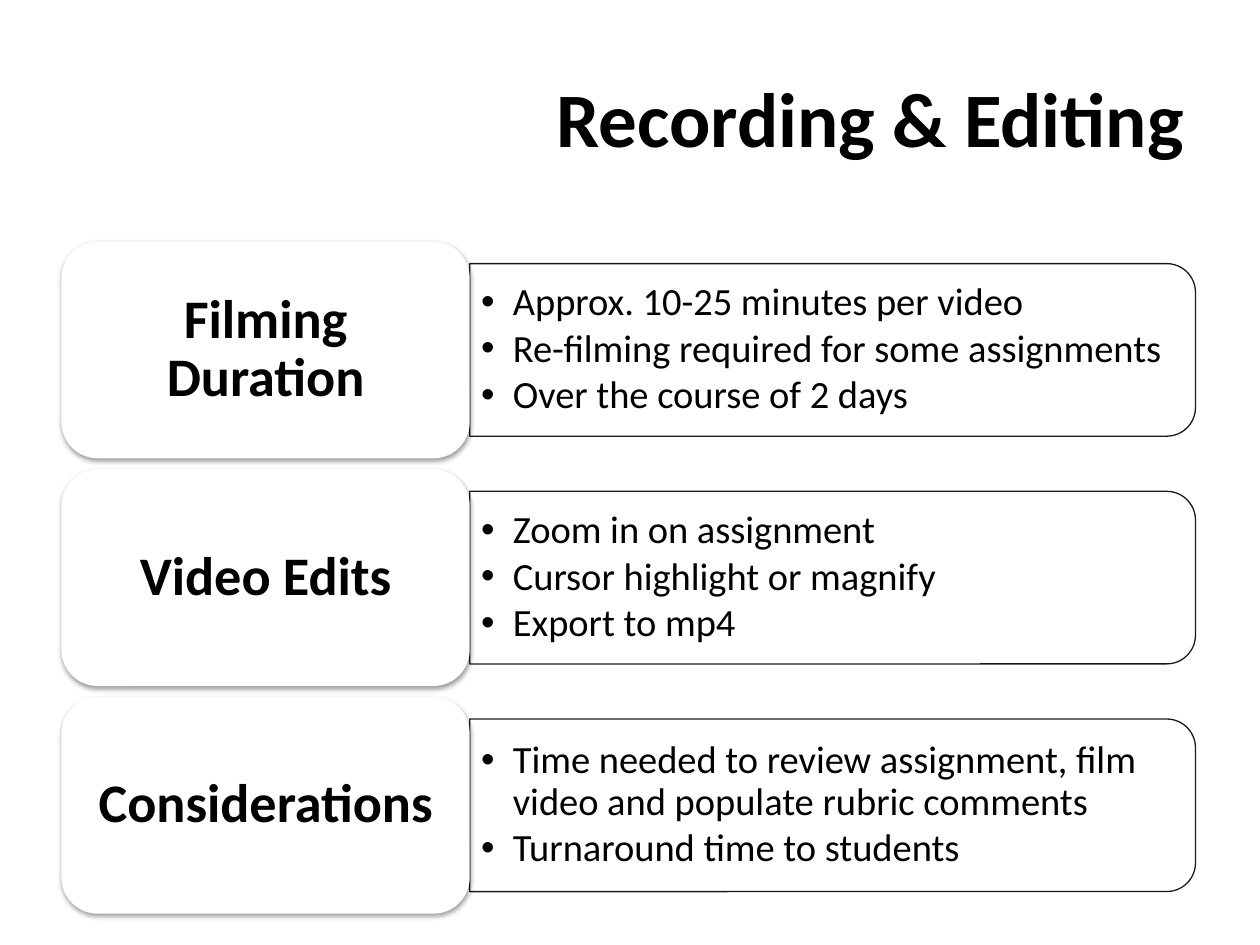
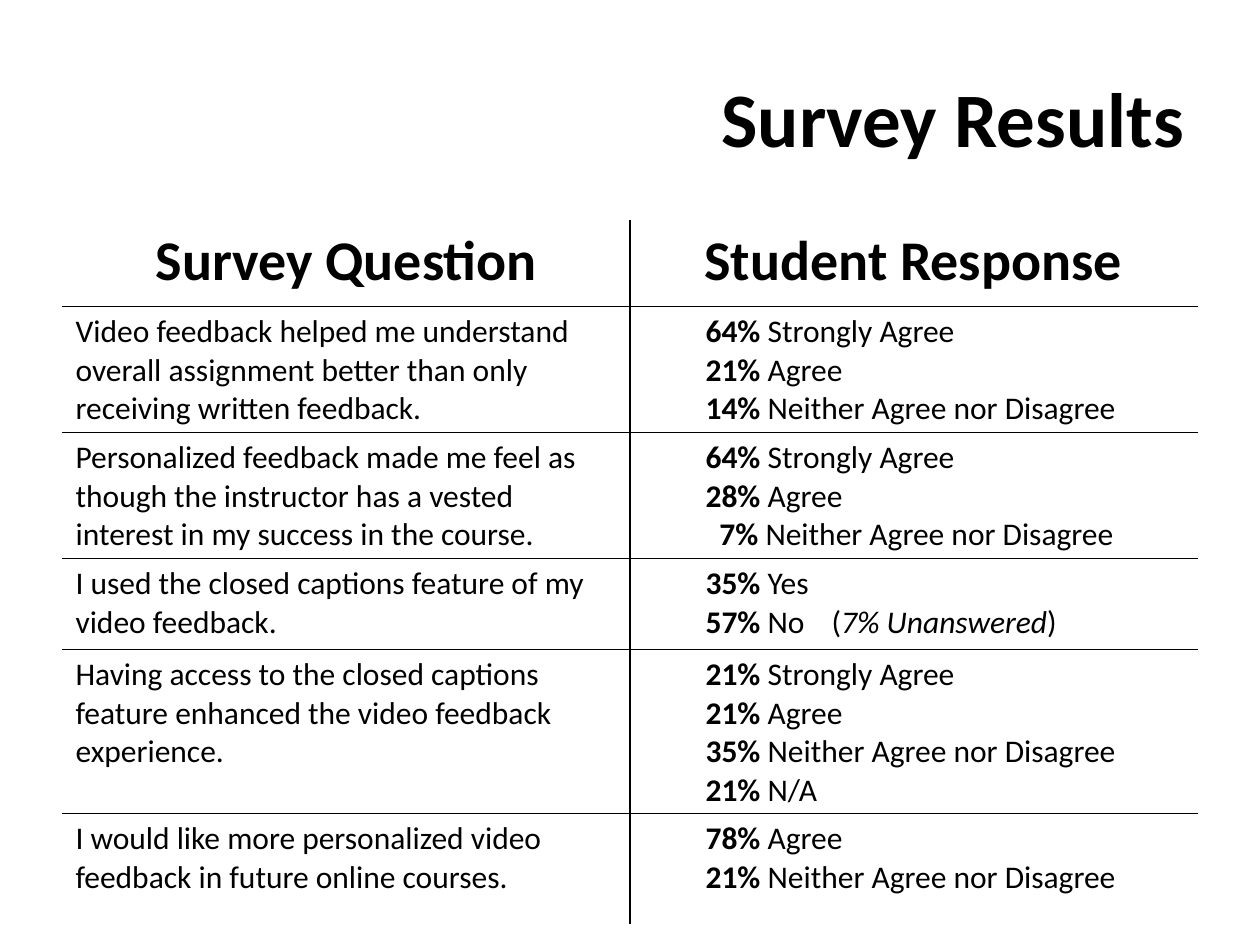
from lxml import etree
from pptx import Presentation
from pptx import util as u
from pptx.dml.color import RGBColor
from pptx.enum import shapes, text
from pptx.oxml import ns

HEX = {"ink": "000000", "paper": "FFFFFF"}
FACE = "Calibri"

# Slide 1: label and bullets of each band
HEAD = "Recording & Editing"
BANDS = [
    ("Filming Duration", ["Approx. 10-25 minutes per video",
                          "Re-filming required for some assignments",
                          "Over the course of 2 days"]),
    ("Video Edits", ["Zoom in on assignment",
                     "Cursor highlight or magnify",
                     "Export to mp4"]),
    ("Considerations", ["Time needed to review assignment, film video and "
                        "populate rubric comments",
                        "Turnaround time to students"]),
]

# Slide 2: question, then (share, answer, aside) lines
TITLE = "Survey Results"
COLS = ["Survey Question", "Student Response"]
SURVEY = [
    ("Video feedback helped me understand overall assignment better than only "
     "receiving written feedback.",
     [("64%", "Strongly Agree", ""), ("21%", "Agree", ""),
      ("14%", "Neither Agree nor Disagree", "")]),
    ("Personalized feedback made me feel as though the instructor has a vested "
     "interest in my success in the course.",
     [("64%", "Strongly Agree", ""), ("28%", "Agree", ""),
      ("7%", "Neither Agree nor Disagree", "")]),
    ("I used the closed captions feature of my video feedback.",
     [("35%", "Yes", ""), ("57%", "No", "7% Unanswered")]),
    ("Having access to the closed captions feature enhanced the video feedback "
     "experience.",
     [("21%", "Strongly Agree", ""), ("21%", "Agree", ""),
      ("35%", "Neither Agree nor Disagree", ""), ("21%", "N/A", "")]),
    ("I would like more personalized video feedback in future online courses.",
     [("78%", "Agree", ""), ("21%", "Neither Agree nor Disagree", "")]),
]
ROWS = [1.73, 2.41, 2.41, 1.83, 2.9, 2.24]


# Shared helpers
def color(key):
    return RGBColor.from_string(HEX[key])


def node(par, tag, **attrs):
    return etree.SubElement(par, ns.qn(tag), attrs)


def add_run(par, words, size, bold=False, slant=False):
    run = par.add_run()
    run.text = words
    font = run.font
    font.name, font.size = FACE, u.Pt(size)
    font.bold, font.italic = bold, slant
    font.color.rgb = color("ink")


def set_frame(frame, side, edge):
    frame.word_wrap = True
    frame.vertical_anchor = text.MSO_ANCHOR.MIDDLE
    frame.margin_left = frame.margin_right = u.Cm(side)
    frame.margin_top = frame.margin_bottom = u.Cm(edge)


def add_box(slide, x, y, w, h, side=0.25, edge=0.13):
    box = slide.shapes.add_textbox(u.Cm(x), u.Cm(y), u.Cm(w), u.Cm(h))
    set_frame(box.text_frame, side, edge)
    return box.text_frame


def add_form(slide, kind, x, y, w, h):
    form = slide.shapes.add_shape(kind, u.Cm(x), u.Cm(y), u.Cm(w), u.Cm(h))
    form.shadow.inherit = False
    form.fill.solid()
    form.fill.fore_color.rgb = color("paper")
    return form


def new_slide(deck, title):
    slide = deck.slides.add_slide(deck.slide_layouts[6])
    par = add_box(slide, 1.27, 0.76, 22.86, 3.18).paragraphs[0]
    par.alignment = text.PP_ALIGN.RIGHT
    add_run(par, title, 44, True)
    return slide


# Bands of slide 1
def add_panel(slide, mid, lines):
    x, w, h = 9.47, 14.63, 3.48
    # Upright shape turned a quarter so its round corners face right
    form = add_form(slide, shapes.MSO_SHAPE.ROUND_2_SAME_RECTANGLE,
                    x + (w - h) / 2, mid - w / 2, h, w)
    form.rotation = 90
    form.line.color.rgb = color("ink")
    form.line.width = u.Pt(0.75)
    for clr in list(form.element.spPr.iter(ns.qn("a:srgbClr"))):
        node(clr, "a:alpha", val="90000")

    frame = add_box(slide, x, mid - 1.57, 14.45, 3.14, 0.23)
    for i, line in enumerate(lines):
        par = frame.add_paragraph() if i else frame.paragraphs[0]
        props = par._p.get_or_add_pPr()
        props.set("marL", str(u.Cm(0.64)))
        props.set("indent", str(-u.Cm(0.64)))
        node(props, "a:buFont", typeface="Arial")
        node(props, "a:buChar", char="•")
        par.line_spacing = 0.9
        par.space_after = u.Pt(2.8)
        add_run(par, line, 22)


def add_label(slide, y, h, words):
    form = add_form(slide, shapes.MSO_SHAPE.ROUNDED_RECTANGLE, 1.24, y, 8.23, h)
    form.line.fill.background()
    glow = form.element.spPr.find(ns.qn("a:effectLst"))
    shade = node(glow, "a:outerShdw", blurRad=str(u.Pt(3.1)), dist=str(u.Pt(1.6)),
                 dir="5400000", rotWithShape="0")
    node(node(shade, "a:srgbClr", val=HEX["ink"]), "a:alpha", val="38000")
    set_frame(form.text_frame, 0.53, 0.36)
    par = form.text_frame.paragraphs[0]
    par.alignment = text.PP_ALIGN.CENTER
    par.line_spacing = 0.9
    add_run(par, words, 31, True)


def add_bands(slide):
    top, step, h = 4.87, 4.59, 4.37
    for i, (label, lines) in enumerate(BANDS):
        y = top + i * step
        add_panel(slide, y + h / 2, lines)
        add_label(slide, y, h, label)


# Table of slide 2
def style_cell(cell, sides):
    props = cell._tc.get_or_add_tcPr()
    for side in sides:
        line = node(props, "a:ln" + side, w=str(u.Pt(1)))
        node(node(line, "a:solidFill"), "a:srgbClr", val=HEX["ink"])
    cell.fill.solid()
    cell.fill.fore_color.rgb = color("paper")


def add_reply(par, share, answer, aside):
    props = par._p.get_or_add_pPr()
    # Single digits sit a little further in
    props.set("marL", "0")
    props.set("indent", str(u.Cm(1.27 if len(share) > 2 else 1.55)))
    if aside:
        node(node(props, "a:tabLst"), "a:tab", pos=str(u.Cm(4.28)), algn="l")
    add_run(par, share, 18, True)
    add_run(par, " " + answer + ("\t(" if aside else ""), 18)
    if aside:
        add_run(par, aside, 18, slant=True)
        add_run(par, ")", 18)


def add_survey(slide):
    grid = slide.shapes.add_table(len(ROWS), 2, u.Cm(1.27), u.Cm(4.45),
                                  u.Cm(22.86), u.Cm(sum(ROWS))).table
    grid.first_row = grid.horz_banding = False
    for row, high in zip(grid.rows, ROWS):
        row.height = u.Cm(high)
    last = len(ROWS) - 1
    for r in range(len(ROWS)):
        for c in range(2):
            sides = "RL"[c] + "T" * (r > 0) + "B" * (r < last)
            style_cell(grid.cell(r, c), sides)
    for c, name in enumerate(COLS):
        par = grid.cell(0, c).text_frame.paragraphs[0]
        par.alignment = text.PP_ALIGN.CENTER
        add_run(par, name, 32, True)
    for r, (ask, replies) in enumerate(SURVEY, 1):
        add_run(grid.cell(r, 0).text_frame.paragraphs[0], ask, 18)
        frame = grid.cell(r, 1).text_frame
        for i, reply in enumerate(replies):
            par = frame.add_paragraph() if i else frame.paragraphs[0]
            add_reply(par, *reply)


def main():
    deck = Presentation()
    deck.slide_width, deck.slide_height = u.Cm(25.4), u.Cm(19.05)
    add_bands(new_slide(deck, HEAD))
    add_survey(new_slide(deck, TITLE))
    deck.save("out.pptx")


if __name__ == "__main__":
    main()
